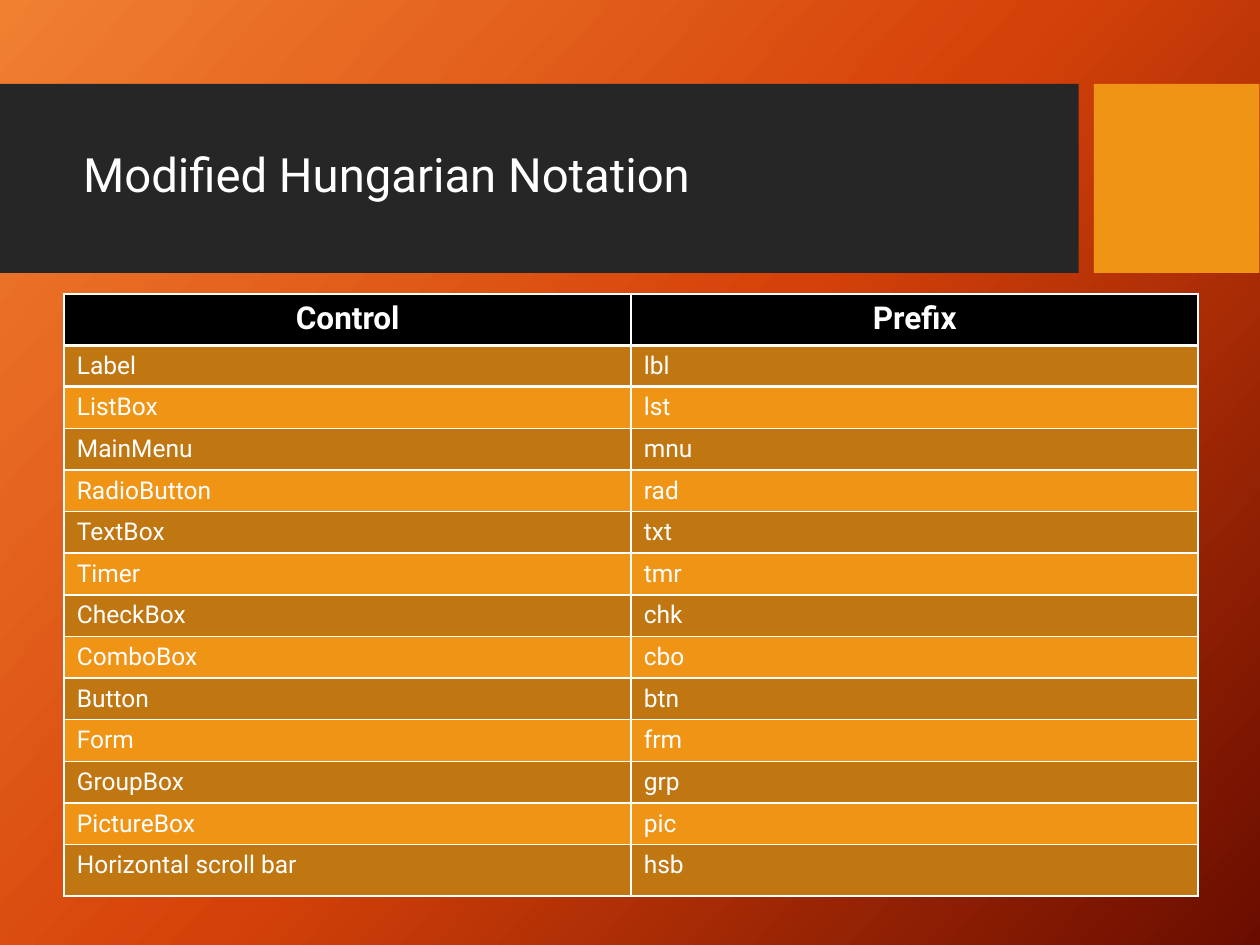
"""Build the slide on modified Hungarian notation prefixes."""
from lxml.etree import SubElement as Sub
from pptx import Presentation as Deck
from pptx.dml.color import RGBColor as Rgb
from pptx.enum.shapes import MSO_SHAPE as Kind
from pptx.enum.text import MSO_ANCHOR as Anchor, MSO_AUTO_SIZE as Fit, PP_ALIGN as Align
from pptx.oxml.ns import qn
from pptx.util import Pt

TITLE = "Modified Hungarian Notation"
HEAD = ("Control", "Prefix")
ROWS = [
    ("Label", "lbl"),
    ("ListBox", "lst"),
    ("MainMenu", "mnu"),
    ("RadioButton", "rad"),
    ("TextBox", "txt"),
    ("Timer", "tmr"),
    ("CheckBox", "chk"),
    ("ComboBox", "cbo"),
    ("Button", "btn"),
    ("Form", "frm"),
    ("GroupBox", "grp"),
    ("PictureBox", "pic"),
    ("Horizontal scroll bar", "hsb"),
]
COLORS = {
    "white": "FFFFFF", "black": "000000", "panel": "262626",
    "amber": "F09415", "ochre": "C07711",
    "light": "F18031", "mid": "D54209", "dark": "6A0D00",
}
STOPS = [(0, "light"), (50, "mid"), (100, "dark")]
BARS = [((0, 48, 616.4, 108), "panel"), ((625, 48, 94.6, 108), "amber")]
TITLE_BOX = (40.3, 59, 568, 85)
TABLE_BOX = (36.7, 168, 648, 344.3)
HEAD_H, ROW_H, LAST_H = 29.2, 23.8, 29.5
FONTS = {
    "title": {"size": Pt(27), "bold": False},
    "head": {"size": Pt(18), "bold": True},
    "body": {"size": Pt(14), "bold": False},
}


def tint(name):
    return Rgb.from_string(COLORS[name])


def apply(item, values):
    for key, value in values.items():
        setattr(item, key, value)


def write(frame, text, style, align):
    para = frame.paragraphs[0]
    para.text = text
    para.alignment = align
    font = para.runs[0].font
    apply(font, {"name": "Roboto", **FONTS[style]})
    font.color.rgb = tint("white")
    return para


def paint(slide):
    fill = slide.background.fill
    fill.gradient()
    fill.gradient_angle = 360 - 42
    stops = next(slide.element.iter(qn("a:gsLst")))
    for old in list(stops):
        stops.remove(old)
    for pos, name in STOPS:
        stop = Sub(stops, qn("a:gs"), pos=str(pos * 1000))
        Sub(stop, qn("a:srgbClr"), val=COLORS[name])


def add_bars(slide):
    for box, name in BARS:
        bar = slide.shapes.add_shape(Kind.RECTANGLE, *map(Pt, box))
        bar.shadow.inherit = False
        bar.fill.solid()
        bar.fill.fore_color.rgb = tint(name)
        bar.line.fill.background()


def add_title(slide):
    title = slide.shapes.title
    apply(title, dict(zip(("left", "top", "width", "height"), map(Pt, TITLE_BOX))))
    frame = title.text_frame
    apply(frame, {"word_wrap": True, "auto_size": Fit.NONE, "vertical_anchor": Anchor.MIDDLE})
    write(frame, TITLE, "title", Align.LEFT).line_spacing = 0.9
    slide.shapes.element.append(title.element)


def rule(cell, side):
    props = cell._tc.get_or_add_tcPr()
    line = props.makeelement(qn(side), {"w": str(Pt(2))})
    props.insert(0, line)
    Sub(Sub(line, qn("a:solidFill")), qn("a:srgbClr"), val=COLORS["white"])


def add_table(slide):
    data = [HEAD, *ROWS]
    table = slide.shapes.add_table(len(data), len(HEAD), *map(Pt, TABLE_BOX)).table
    highs = [HEAD_H] + [ROW_H] * (len(ROWS) - 1) + [LAST_H]
    for r, (texts, high) in enumerate(zip(data, highs)):
        table.rows[r].height = Pt(high)
        name = ("amber", "ochre")[r % 2] if r else "black"
        style, align = ("body", Align.LEFT) if r else ("head", Align.CENTER)
        for c, text in enumerate(texts):
            cell = table.cell(r, c)
            cell.fill.solid()
            cell.fill.fore_color.rgb = tint(name)
            write(cell.text_frame, text, style, align)
            if r < 2:
                rule(cell, "a:lnT" if r else "a:lnB")


def main():
    deck = Deck()
    apply(deck, {"slide_width": Pt(720), "slide_height": Pt(540)})
    slide = deck.slides.add_slide(deck.slide_layouts[5])
    paint(slide)
    add_bars(slide)
    add_title(slide)
    add_table(slide)
    deck.save("out.pptx")


if __name__ == "__main__":
    main()
